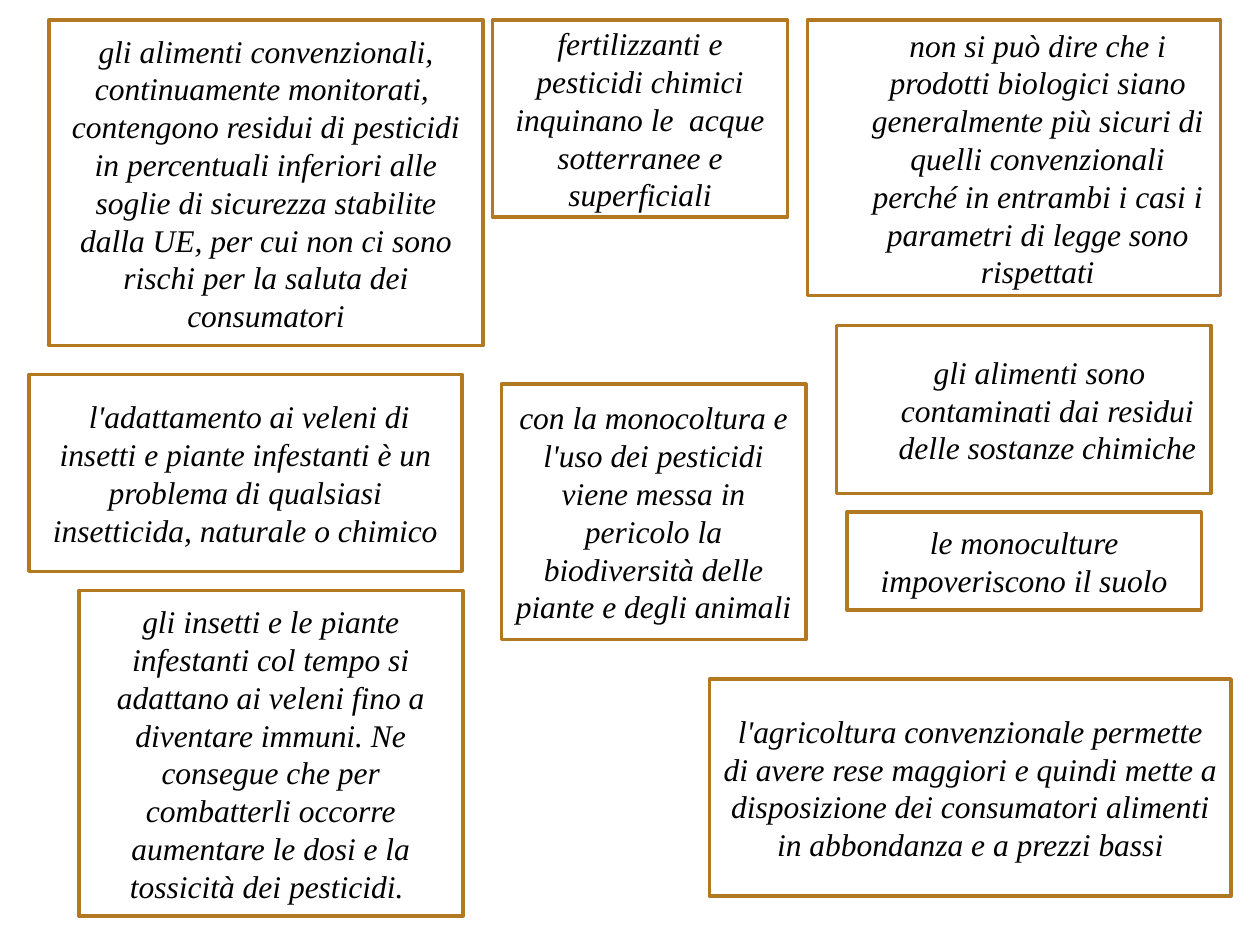
from dataclasses import dataclass

from pptx import Presentation
from pptx.dml.color import RGBColor
from pptx.enum.shapes import MSO_SHAPE
from pptx.enum.text import MSO_ANCHOR, PP_ALIGN
from pptx.util import Pt

RECT = MSO_SHAPE.RECTANGLE
MIDDLE = MSO_ANCHOR.MIDDLE
CENTER = PP_ALIGN.CENTER


@dataclass(frozen=True)
class Theme:
    paper: RGBColor = RGBColor(0xFF, 0xFF, 0xFF)
    edge: RGBColor = RGBColor(0xB2, 0x78, 0x22)
    ink: RGBColor = RGBColor(0, 0, 0)
    font: str = "Times New Roman"
    size: float = 18
    lead: float = 21.6
    rule: float = 2


THEME = Theme()

CARDS = [
    (28, 11.5, 248, 186,
     "gli alimenti convenzionali, continuamente monitorati,  contengono "
     "residui di pesticidi in percentuali inferiori alle soglie di sicurezza "
     "stabilite dalla UE, per cui non ci sono rischi per la saluta dei consumatori"),
    (281.5, 11.5, 168.5, 112.5,
     "fertilizzanti e pesticidi chimici inquinano le  acque sotterranee e superficiali"),
    (461.5, 11.5, 236, 157.5,
     "non si può dire che i prodotti biologici siano generalmente più sicuri di "
     "quelli convenzionali perché in entrambi i casi i parametri di legge sono rispettati",
     27, 0),
    (16.5, 214, 247.5, 112.5,
     " l'adattamento ai veleni di insetti e piante infestanti è un problema di "
     "qualsiasi insetticida, naturale o chimico"),
    (478, 186, 214, 96,
     "gli alimenti sono contaminati dai residui delle sostanze chimiche", 27, -9),
    (484, 292.5, 202.5, 56, "le monoculture impoveriscono il suolo"),
    (45, 337.5, 219.5, 186,
     "gli insetti e le piante infestanti col tempo si adattano ai veleni fino a "
     "diventare immuni. Ne consegue che per combatterli occorre aumentare le dosi "
     "e la tossicità dei pesticidi. "),
    (405.5, 388, 298, 124,
     "l'agricoltura convenzionale permette di avere rese maggiori e quindi mette a "
     "disposizione dei consumatori alimenti in abbondanza e a prezzi bassi"),
    (286.5, 219.5, 174, 146,
     "con la monocoltura e l'uso dei pesticidi viene messa in pericolo la "
     "biodiversità delle piante e degli animali"),
]


def add_text(frame, text, margin, indent):
    frame.word_wrap = True
    frame.vertical_anchor = MIDDLE
    para = frame.paragraphs[0]
    para.alignment = CENTER
    para.line_spacing = Pt(THEME.lead)
    if margin:
        props = para._p.get_or_add_pPr()
        props.set("marL", str(Pt(margin)))
        props.set("indent", str(Pt(indent)))
    run = para.add_run()
    run.text = text
    run.font.name = THEME.font
    run.font.size = Pt(THEME.size)
    run.font.italic = True
    run.font.color.rgb = THEME.ink


def add_card(slide, left, top, width, height, text, margin=0, indent=0):
    card = slide.shapes.add_shape(RECT, Pt(left), Pt(top), Pt(width), Pt(height))
    card.shadow.inherit = False
    card.fill.solid()
    card.fill.fore_color.rgb = THEME.paper
    card.line.color.rgb = THEME.edge
    card.line.width = Pt(THEME.rule)
    add_text(card.text_frame, text, margin, indent)


def main():
    deck = Presentation()
    deck.slide_width, deck.slide_height = Pt(720), Pt(540)
    slide = deck.slides.add_slide(deck.slide_layouts[6])
    for card in CARDS:
        add_card(slide, *card)
    deck.save("out.pptx")


if __name__ == "__main__":
    main()
